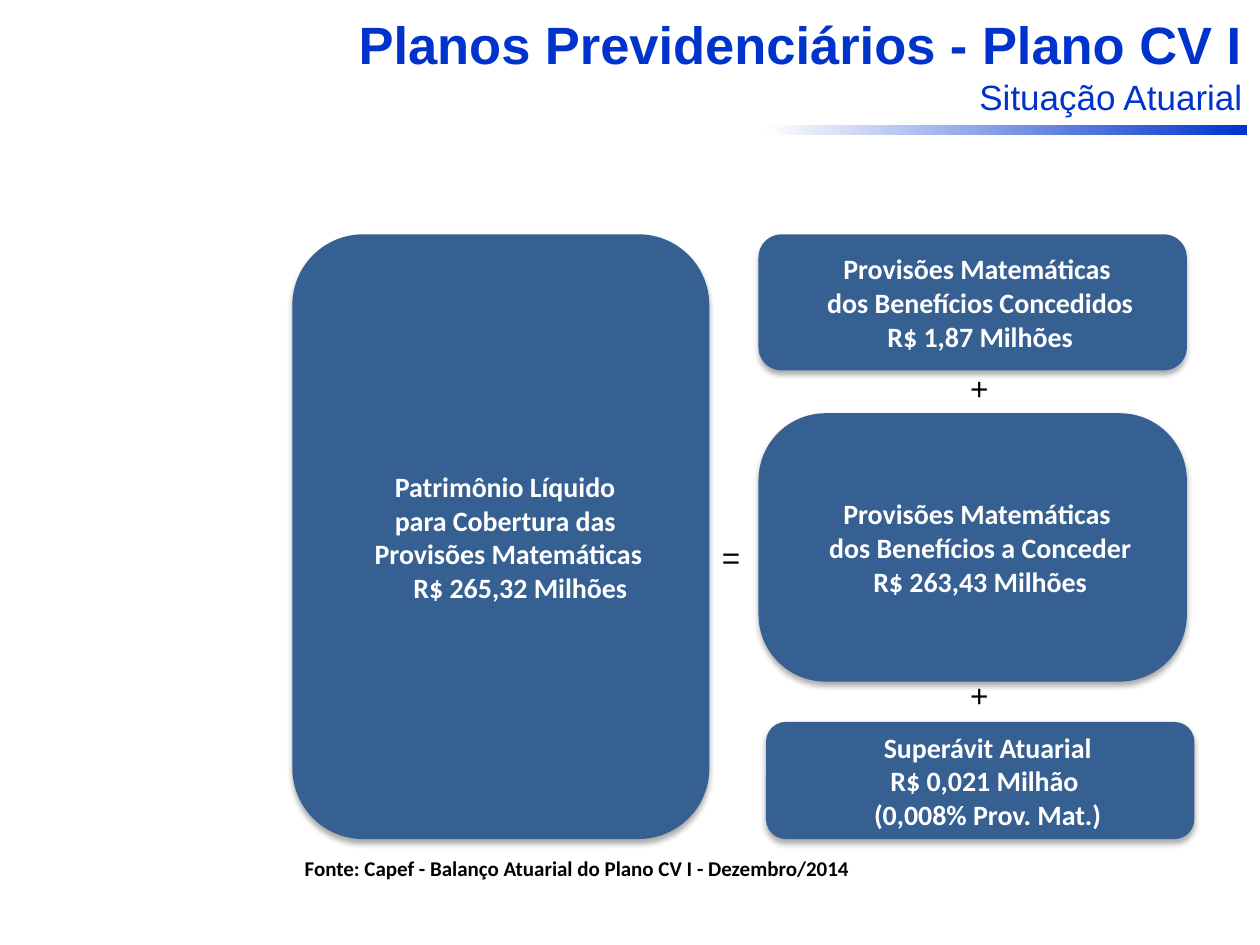
from lxml import etree
from pptx import Presentation
from pptx.dml.color import RGBColor
from pptx.enum import shapes, text
from pptx.oxml.ns import qn
from pptx.util import Inches, Pt

BLUE, STEEL, WHITE, BLACK = "0033CC", "366092", "FFFFFF", "000000"
LEFT, CENTER, RIGHT = text.PP_ALIGN.LEFT, text.PP_ALIGN.CENTER, text.PP_ALIGN.RIGHT


def color(value):
    return RGBColor.from_string(value)


def write(box, lines, align, indents=()):
    frame = box.text_frame
    for index, (words, style, ink) in enumerate(lines):
        para = frame.paragraphs[0] if index == 0 else frame.add_paragraph()
        para.alignment = align
        if indents:
            margin, indent = indents[index]
            props = para._p.get_or_add_pPr()
            props.set("marL", str(Inches(margin)))
            props.set("indent", str(Inches(indent)))
        span = para.add_run()
        span.text = words
        for name, value in style.items():
            setattr(span.font, name, value)
        span.font.color.rgb = color(ink)


deck = Presentation()
deck.slide_width, deck.slide_height = Inches(10), Inches(7.5)
page = deck.slides.add_slide(deck.slide_layouts[6])

bar = page.shapes.add_shape(
    shapes.MSO_SHAPE.RECTANGLE, Inches(6.06), Inches(0.99), Inches(3.84), Inches(0.08)
)
bar.shadow.inherit = False
bar.line.fill.background()
bar.fill.gradient()
bar.fill.gradient_angle = 0
for stop, position, shade in zip(bar.fill.gradient_stops, (0, 1), (WHITE, BLUE)):
    stop.position = position
    stop.color.rgb = color(shade)

heading = {"name": "Arial", "size": Pt(30), "bold": True}
subheading = {"name": "Arial", "size": Pt(20), "bold": False}
symbol = {"name": "Arial", "size": Pt(18)}
source = {"name": "Calibri", "size": Pt(12), "bold": True}
label = {"name": "Calibri", "size": Pt(16), "bold": True}

text_boxes = [
    ((2.67, 0.05, 7.29, 0.94), False, RIGHT, [
        ("Planos Previdenciários - Plano CV I", heading, BLUE),
        ("Situação Atuarial", subheading, BLUE),
    ]),
    ((5.63, 4.22, 0.35, 0.4), False, LEFT, [("=", symbol, BLACK)]),
    ((7.6, 2.88, 0.35, 0.4), False, LEFT, [("+", symbol, BLACK)]),
    ((7.6, 5.32, 0.35, 0.4), False, LEFT, [("+", symbol, BLACK)]),
    ((2.32, 6.74, 4.88, 0.3), True, LEFT, [
        ("Fonte: Capef - Balanço Atuarial do Plano CV I - Dezembro/2014", source, BLACK),
    ]),
]
for place, wrap, align, lines in text_boxes:
    box = page.shapes.add_textbox(*map(Inches, place))
    box.text_frame.word_wrap = wrap
    write(box, lines, align)

cards = [
    ((2.32, 1.86, 3.31, 4.8), 0.17, [
        "Patrimônio Líquido ", "para Cobertura das ",
        "Provisões Matemáticas", "R$ 265,32 Milhões",
    ]),
    ((6.02, 1.86, 3.4, 1.08), 0.17, [
        "Provisões Matemáticas ", "dos Benefícios Concedidos", "R$ 1,87 Milhões",
    ]),
    ((6.02, 3.28, 3.4, 2.13), 0.25, [
        "Provisões Matemáticas ", "dos Benefícios a Conceder", "R$ 263,43 Milhões",
    ]),
    ((6.08, 5.73, 3.4, 0.93), 0.17, [
        "Superávit Atuarial", "R$ 0,021 Milhão ", "(0,008% Prov. Mat.)",
    ]),
]
card_indents = [(0.18, -0.06)] * 3 + [(0.31, 0)]
for place, rounding, lines in cards:
    card = page.shapes.add_shape(shapes.MSO_SHAPE.ROUNDED_RECTANGLE, *map(Inches, place))
    card.adjustments[0] = rounding
    card.fill.solid()
    card.fill.fore_color.rgb = color(STEEL)
    card.line.fill.background()
    card.shadow.inherit = False
    effects = card._element.spPr.find(qn("a:effectLst"))
    shadow = etree.SubElement(
        effects, qn("a:outerShdw"), blurRad=str(Pt(3.5)), dist=str(Pt(2.2)),
        dir="5400000", rotWithShape="0",
    )
    shade = etree.SubElement(shadow, qn("a:srgbClr"), val=BLACK)
    etree.SubElement(shade, qn("a:alpha"), val="32000")
    card.text_frame.word_wrap = False
    card.text_frame.vertical_anchor = text.MSO_ANCHOR.MIDDLE
    write(card, [(words, label, WHITE) for words in lines], CENTER, card_indents)

deck.save("out.pptx")
